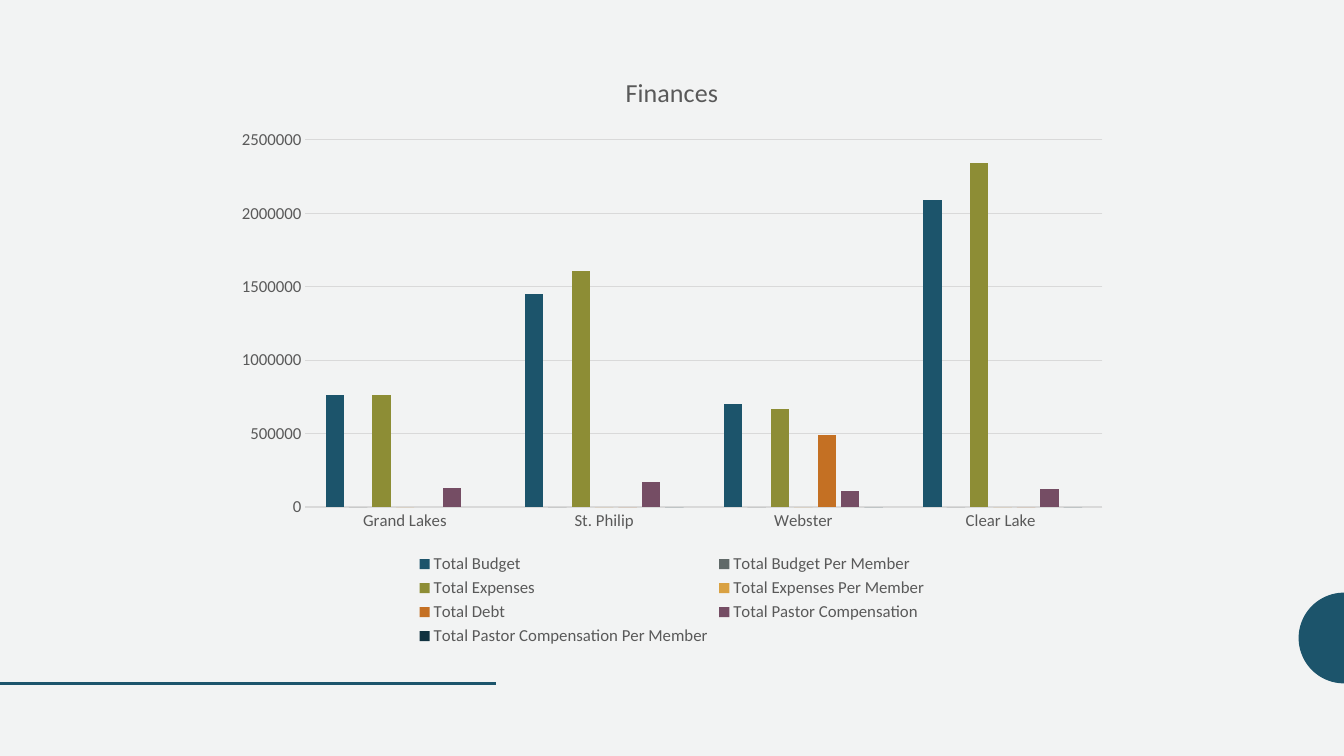
from math import cos, pi, sin

from lxml.etree import SubElement
from pptx import Presentation
from pptx.chart.data import CategoryChartData as ChartData
from pptx.dml.color import RGBColor as RGB
from pptx.enum.chart import XL_CHART_TYPE as Kind
from pptx.enum.chart import XL_LEGEND_POSITION as Spot
from pptx.enum.chart import XL_TICK_MARK as Tick
from pptx.enum.shapes import MSO_CONNECTOR as Link
from pptx.oxml.ns import qn
from pptx.util import Inches, Pt

FONT = "Calibri"
COLORS = {"back": "F2F3F3", "teal": "1C546B", "text": "595959", "grid": "D9D9D9"}
CITIES = ["Grand Lakes", "St. Philip", "Webster", "Clear Lake "]
SERIES = [
    ("Total Budget", "1C546B", [760000, 1450000, 700000, 2090000]),
    ("Total Budget Per Member", "606968", [0, 0, 0, 0]),
    ("Total Expenses", "8D8D35", [760000, 1610000, 670000, 2340000]),
    ("Total Expenses Per Member", "D9A142", [0, 0, 0, 0]),
    ("Total Debt", "C47023", [None, 0, 490000, 0]),
    ("Total Pastor Compensation", "754D64", [130000, 170000, 110000, 120000]),
    ("Total Pastor Compensation Per Member", "113240", [None, 0, 0, 0]),
]


def paint(fill, color):
    fill.solid()
    fill.fore_color.rgb = RGB.from_string(COLORS.get(color, color))


def style(font, size=12, color="text", bold=False):
    font.name, font.size, font.bold = FONT, Pt(size), bold
    font.color.rgb = RGB.from_string(COLORS[color])


def write(frame, text, **form):
    run = frame.paragraphs[0].add_run()
    run.text = text
    style(run.font, **form)


def stroke(line, color, width):
    paint(line.fill, color)
    line.width = Pt(width)


def add_disc(slide, right, mid, rad):
    """Draw the left half of a disc against the slide's right edge."""
    steps = 48
    angles = [pi / 2 + pi * i / steps for i in range(steps + 1)]
    points = [(Inches(right + rad * cos(a)), Inches(mid - rad * sin(a)))
              for a in angles]
    form = slide.shapes.build_freeform(*points[0], scale=1.0)
    form.add_line_segments(points[1:], close=True)
    disc = form.convert_to_shape()
    disc.shadow.inherit = False
    paint(disc.fill, "teal")
    disc.line.fill.background()


def add_rule(slide, left, top, width):
    y = Inches(top)
    rule = slide.shapes.add_connector(
        Link.STRAIGHT, Inches(left), y, Inches(left + width), y)
    stroke(rule.line, "teal", 2)
    SubElement(rule._element.spPr, qn("a:effectLst"))


def add_bars(slide, left, top, width, height):
    data = ChartData(number_format="General")
    data.categories = CITIES
    for name, _, values in SERIES:
        data.add_series(name, values)
    box = [Inches(n) for n in (left, top, width, height)]
    chart = slide.shapes.add_chart(Kind.COLUMN_CLUSTERED, *box, data).chart
    style(chart.font)
    chart.has_title = True
    write(chart.chart_title.text_frame, "Finances", size=18.6)
    chart.chart_title.include_in_layout = False

    plot = chart.plots[0]
    plot.gap_width, plot.overlap = 219, -27
    plot.vary_by_categories = False
    for bar, (_, color, _) in zip(plot.series, SERIES):
        paint(bar.format.fill, color)
        bar.invert_if_negative = False

    for axis in (chart.category_axis, chart.value_axis):
        axis.major_tick_mark = axis.minor_tick_mark = Tick.NONE
        style(axis.tick_labels.font)
    stroke(chart.category_axis.format.line, "grid", 0.75)
    values = chart.value_axis
    values.format.line.fill.background()
    values.has_major_gridlines = True
    stroke(values.major_gridlines.format.line, "grid", 0.75)

    chart.has_legend = True
    chart.legend.position = Spot.BOTTOM
    chart.legend.include_in_layout = False
    style(chart.legend.font)


def main():
    deck = Presentation()
    deck.slide_width, deck.slide_height = Inches(13.33), Inches(7.5)
    slide = deck.slides.add_slide(deck.slide_layouts[6])
    paint(slide.background.fill, "back")
    add_disc(slide, right=13.33, mid=6.33, rad=0.45)
    add_rule(slide, left=0, top=6.78, width=4.92)
    add_bars(slide, left=2.22, top=0.52, width=8.89, height=5.93)
    deck.save("out.pptx")


if __name__ == "__main__":
    main()
